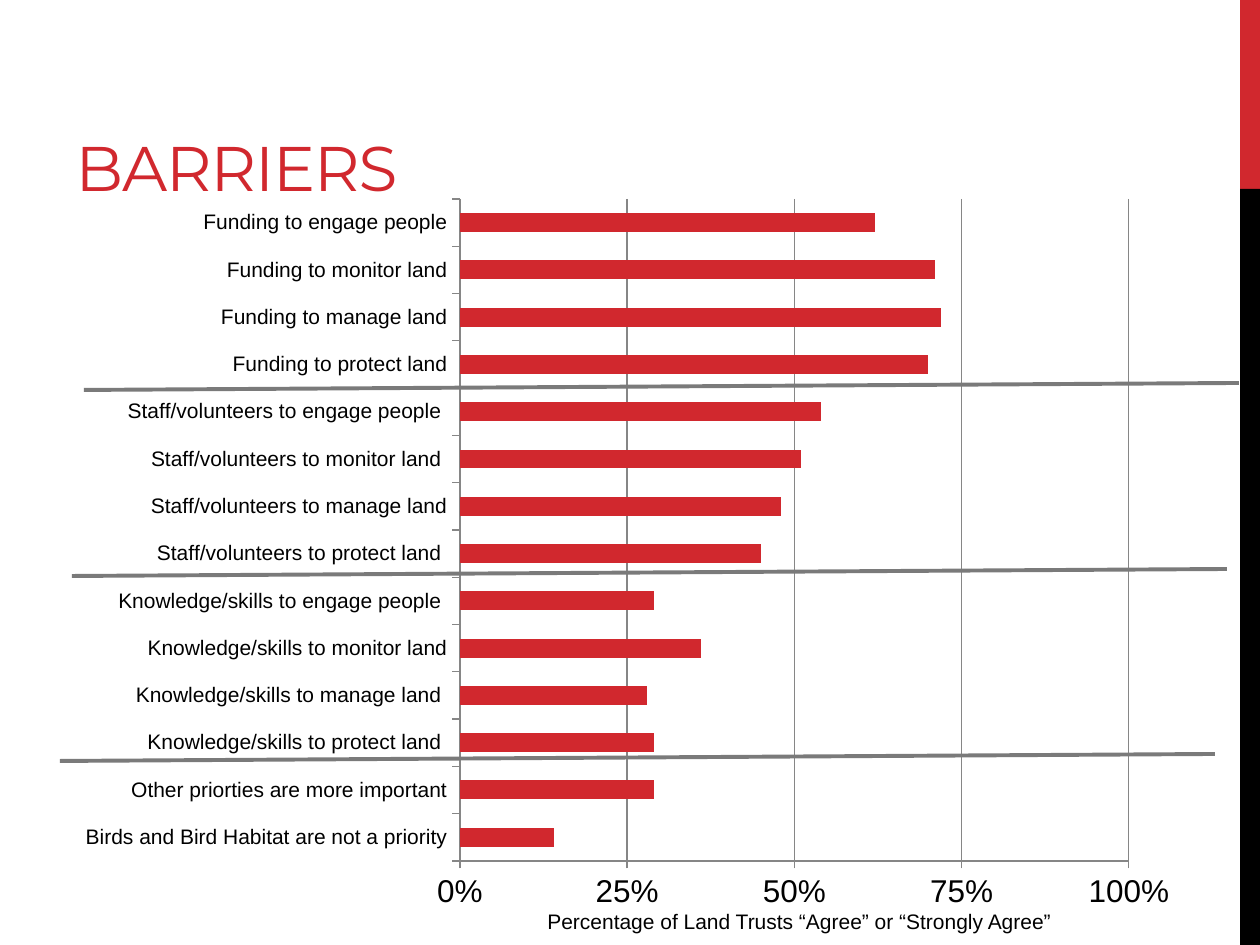
from lxml.etree import SubElement
from pptx import Presentation
from pptx.chart.data import CategoryChartData
from pptx.dml.color import RGBColor
from pptx.enum.chart import XL_CHART_TYPE, XL_TICK_MARK
from pptx.enum.shapes import MSO_CONNECTOR, MSO_SHAPE
from pptx.enum.text import MSO_ANCHOR, PP_ALIGN
from pptx.oxml import parse_xml
from pptx.oxml.ns import nsdecls, qn
from pptx.util import Pt

RED, BLACK, GREY, AXIS_GREY = "D1282E", "000000", "7A7A7A", "868686"
TITLE = "BARRIERS"
CAPTION = "Percentage of Land Trusts “Agree” or “Strongly Agree”"
BARRIERS = [
    ("Birds and Bird Habitat are not a priority", 0.14),
    ("Other priorties are more important", 0.29),
    ("Knowledge/skills to protect land ", 0.29),
    ("Knowledge/skills to manage land ", 0.28),
    ("Knowledge/skills to monitor land", 0.36),
    ("Knowledge/skills to engage people ", 0.29),
    ("Staff/volunteers to protect land ", 0.45),
    ("Staff/volunteers to manage land", 0.48),
    ("Staff/volunteers to monitor land ", 0.51),
    ("Staff/volunteers to engage people ", 0.54),
    ("Funding to protect land", 0.70),
    ("Funding to manage land", 0.72),
    ("Funding to monitor land", 0.71),
    ("Funding to engage people", 0.62),
]
SIDE_BANDS = [(0, 189, RED), (189, 756, BLACK)]
DIVIDERS = [(84, 390), (72, 576), (60, 761)]
DIVIDER_RUN, DIVIDER_RISE = 1155, 7
CHART_BOX = (63, 185, 1129, 738)
PLOT_BOX = (460, 199, 669, 662)


def px(*lengths):
    return [round(length * 914400 / 126) for length in lengths]


def color(value):
    return RGBColor.from_string(value)


def style_font(font, size, name="Arial", fill=BLACK):
    font.size, font.name, font.bold = Pt(size), name, False
    font.color.rgb = color(fill)


def style_line(line, fill, width):
    line.color.rgb = color(fill)
    line.width = Pt(width)


def add_band(page, top, height, fill):
    band = page.shapes.add_shape(MSO_SHAPE.RECTANGLE, *px(1240, top, 20, height))
    band.shadow.inherit = False
    band.fill.solid()
    band.fill.fore_color.rgb = color(fill)
    band.line.fill.background()


def set_title(page):
    title = page.shapes.title
    title.left, title.top, title.width, title.height = px(63, 21, 798, 189)
    title.text_frame.text = TITLE
    title.text_frame.vertical_anchor = MSO_ANCHOR.BOTTOM
    para = title.text_frame.paragraphs[0]
    para.alignment = PP_ALIGN.LEFT
    style_font(para.font, 36, "Montserrat", RED)
    para.runs[0].font._element.set("spc", "-60")


def place_plot(chart):
    left, top, width, height = CHART_BOX
    plot_left, plot_top, plot_width, plot_height = PLOT_BOX
    settings = [
        ("layoutTarget", "inner"), ("xMode", "edge"), ("yMode", "edge"),
        ("x", round((plot_left - left) / width, 4)),
        ("y", round((plot_top - top) / height, 4)),
        ("w", round(plot_width / width, 4)),
        ("h", round(plot_height / height, 4)),
    ]
    layout = parse_xml(f"<c:layout {nsdecls('c')}><c:manualLayout/></c:layout>")
    for tag, value in settings:
        SubElement(layout[0], qn(f"c:{tag}")).set("val", str(value))
    area = chart._chartSpace.chart.plotArea
    for old in area.findall(qn("c:layout")):
        area.remove(old)
    area.insert(0, layout)


def add_barrier_chart(page):
    data = CategoryChartData(number_format="0%")
    data.categories = [name for name, share in BARRIERS]
    data.add_series("Series 1", [share for name, share in BARRIERS])
    chart = page.shapes.add_chart(
        XL_CHART_TYPE.BAR_CLUSTERED, *px(*CHART_BOX), data).chart
    chart.has_title = chart.has_legend = False
    style_font(chart.font, 18)

    plot = chart.plots[0]
    plot.gap_width, plot.vary_by_categories = 150, False
    bars = plot.series[0].format.fill
    bars.solid()
    bars.fore_color.rgb = color(RED)

    for axis, size in [(chart.category_axis, 12), (chart.value_axis, 18)]:
        axis.major_tick_mark = XL_TICK_MARK.OUTSIDE
        axis.minor_tick_mark = XL_TICK_MARK.NONE
        style_font(axis.tick_labels.font, size)
        style_line(axis.format.line, AXIS_GREY, 0.75)
    values = chart.value_axis
    values.minimum_scale, values.maximum_scale, values.major_unit = 0, 1, 0.25
    values.has_major_gridlines = True
    style_line(values.major_gridlines.format.line, AXIS_GREY, 0.75)
    values.tick_labels.number_format = "0%"
    values.tick_labels.number_format_is_linked = False
    place_plot(chart)


def add_caption(page):
    box = page.shapes.add_textbox(*px(511, 902, 577, 38))
    box.text_frame.word_wrap = True
    para = box.text_frame.paragraphs[0]
    para.text, para.alignment = CAPTION, PP_ALIGN.CENTER
    style_font(para.font, 12)


def add_divider(page, left, top):
    divider = page.shapes.add_connector(
        MSO_CONNECTOR.STRAIGHT,
        *px(left, top, left + DIVIDER_RUN, top - DIVIDER_RISE))
    style_line(divider.line, GREY, 2.25)
    SubElement(divider._element.spPr, qn("a:effectLst"))


def main():
    deck = Presentation()
    deck.slide_width, deck.slide_height = px(1260, 945)
    page = deck.slides.add_slide(deck.slide_layouts[5])
    for band in SIDE_BANDS:
        add_band(page, *band)
    set_title(page)
    add_barrier_chart(page)
    add_caption(page)
    for divider in DIVIDERS:
        add_divider(page, *divider)
    deck.save("out.pptx")


if __name__ == "__main__":
    main()
